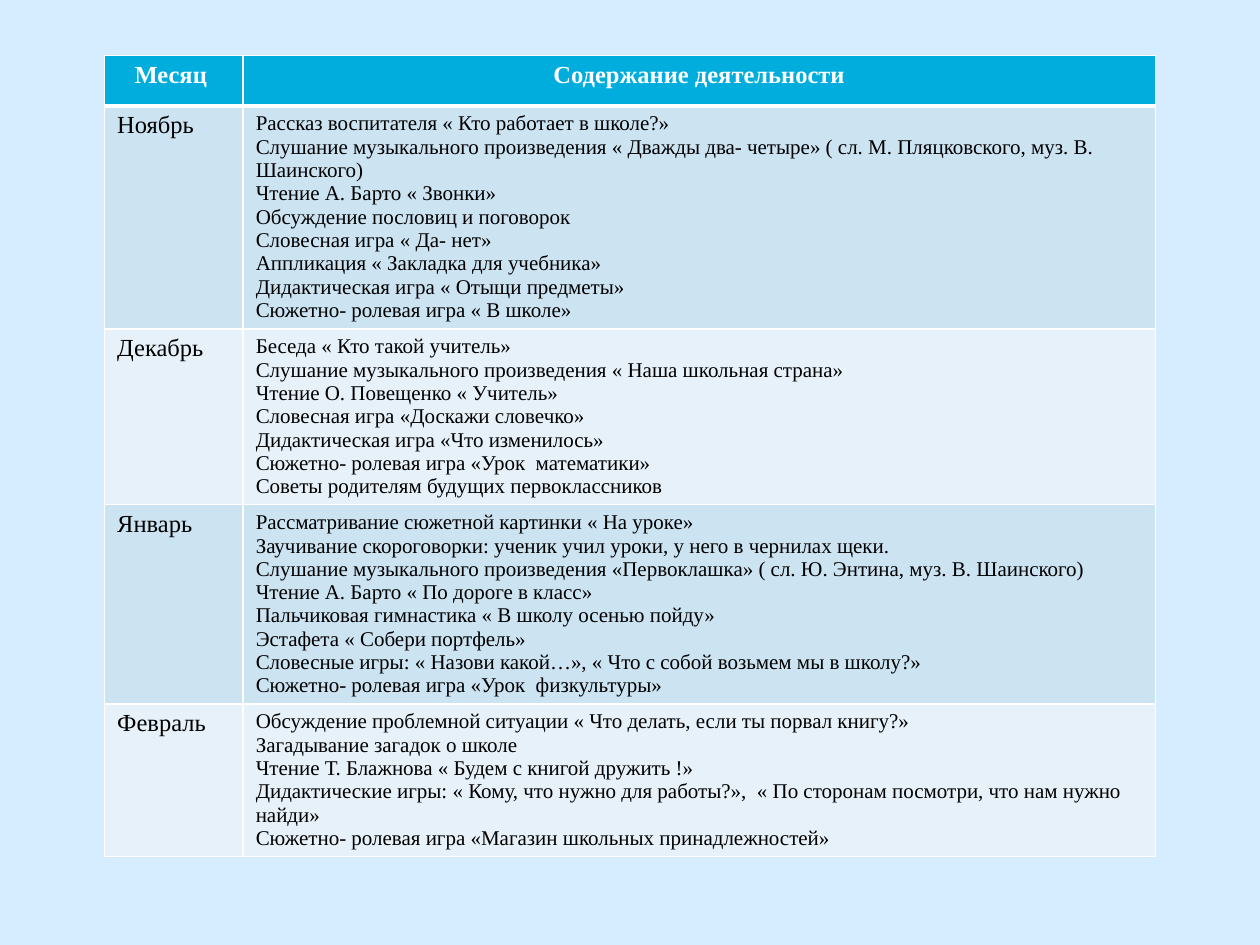
import pptx
import pptx.util
import pptx.dml.color
import pptx.enum.text
import pptx.oxml
import pptx.oxml.ns

Inches = pptx.util.Inches
Pt = pptx.util.Pt
ALIGN = pptx.enum.text.PP_ALIGN

HUES = {
    "page": "D6ECFF",
    "head": "00ADDC",
    "dark": "CCE3F2",
    "light": "E7F1F9",
    "line": "FFFFFF",
    "title": "FFFFFF",
    "text": "000000",
}
HEAD = {"size": Pt(14), "bold": True}
MONTH = {"size": Pt(14), "bold": False}
ITEM = {"size": Pt(12), "bold": False}

TITLES = ["Месяц ", "Содержание деятельности"]
PLAN = {
    "Ноябрь": [
        "Рассказ воспитателя « Кто работает в школе?»",
        "Слушание музыкального произведения « Дважды два- четыре» "
        "( сл. М. Пляцковского, муз. В. Шаинского)",
        "Чтение А. Барто « Звонки»",
        "Обсуждение пословиц и поговорок",
        "Словесная игра « Да- нет»",
        "Аппликация « Закладка для учебника»",
        "Дидактическая игра « Отыщи предметы»",
        "Сюжетно- ролевая игра « В школе»",
    ],
    "Декабрь": [
        "Беседа « Кто такой учитель»",
        "Слушание музыкального произведения « Наша школьная страна»",
        "Чтение О. Повещенко « Учитель»",
        "Словесная игра «Доскажи словечко»",
        "Дидактическая игра «Что изменилось»",
        "Сюжетно- ролевая игра «Урок  математики»",
        "Советы родителям будущих первоклассников",
    ],
    "Январь": [
        "Рассматривание сюжетной картинки « На уроке»",
        "Заучивание скороговорки: ученик учил уроки, у него в чернилах щеки.",
        "Слушание музыкального произведения «Первоклашка» "
        "( сл. Ю. Энтина, муз. В. Шаинского)",
        "Чтение А. Барто « По дороге в класс»",
        "Пальчиковая гимнастика « В школу осенью пойду»",
        "Эстафета « Собери портфель»",
        "Словесные игры: « Назови какой…», « Что с собой возьмем мы в школу?»",
        "Сюжетно- ролевая игра «Урок  физкультуры»",
    ],
    "Февраль": [
        "Обсуждение проблемной ситуации « Что делать, если ты порвал книгу?»",
        "Загадывание загадок о школе",
        "Чтение Т. Блажнова « Будем с книгой дружить !»",
        "Дидактические игры: « Кому, что нужно для работы?»,  "
        "« По сторонам посмотри, что нам нужно найди»",
        "Сюжетно- ролевая игра «Магазин школьных принадлежностей»",
    ],
}
WIDTHS = [1.1, 7.24]
HEIGHTS = [0.4, 1.77, 1.39, 1.58, 1.21]


def tint(hue):
    return pptx.dml.color.RGBColor.from_string(HUES[hue])


class Page:
    """Holds the text style and the current slide."""

    def __init__(self, slide, face):
        self.slide = slide
        self.face = face

    def back(self, hue):
        fill = self.slide.background.fill
        fill.solid()
        fill.fore_color.rgb = tint(hue)

    def grid(self, left, top, widths, heights):
        table = self.slide.shapes.add_table(
            len(heights), len(widths), Inches(left), Inches(top),
            Inches(sum(widths)), Inches(sum(heights))).table
        for column, width in zip(table.columns, widths):
            column.width = Inches(width)
        for row, height in zip(table.rows, heights):
            row.height = Inches(height)
        return table

    def edge(self, cell, sides):
        """Draw cell borders; sides maps L, R, T, B to points."""
        props = cell._tc.get_or_add_tcPr()
        for side, width in sides.items():
            props.append(pptx.oxml.parse_xml(
                f'<a:ln{side} {pptx.oxml.ns.nsdecls("a")} w="{Pt(width)}">'
                f'<a:solidFill><a:srgbClr val="{HUES["line"]}"/></a:solidFill>'
                f'</a:ln{side}>'))

    def cell(self, cell, lines, form, fill, hue="text", align=ALIGN.LEFT,
             top=1, base=1):
        self.edge(cell, {"L": 1, "R": 1, "T": top, "B": base})
        cell.fill.solid()
        cell.fill.fore_color.rgb = tint(fill)
        frame = cell.text_frame
        for index, line in enumerate(lines):
            para = frame.add_paragraph() if index else frame.paragraphs[0]
            para.alignment = align
            run = para.add_run()
            run.text = line
            run.font.name = self.face
            run.font.color.rgb = tint(hue)
            for key, value in form.items():
                setattr(run.font, key, value)


def main():
    deck = pptx.Presentation()
    deck.slide_width = Inches(10)
    deck.slide_height = Inches(7.5)
    page = Page(deck.slides.add_slide(deck.slide_layouts[6]), "Times New Roman")
    page.back("page")

    table = page.grid(0.83, 0.44, WIDTHS, HEIGHTS)
    for col, title in enumerate(TITLES):
        page.cell(table.cell(0, col), [title], HEAD, "head", "title",
                  ALIGN.CENTER, base=3)
    for row, (month, items) in enumerate(PLAN.items(), 1):
        fill = "dark" if row % 2 else "light"
        top = 3 if row == 1 else 1
        page.cell(table.cell(row, 0), [month], MONTH, fill, top=top)
        page.cell(table.cell(row, 1), items, ITEM, fill, top=top)

    deck.save("out.pptx")


if __name__ == "__main__":
    main()
